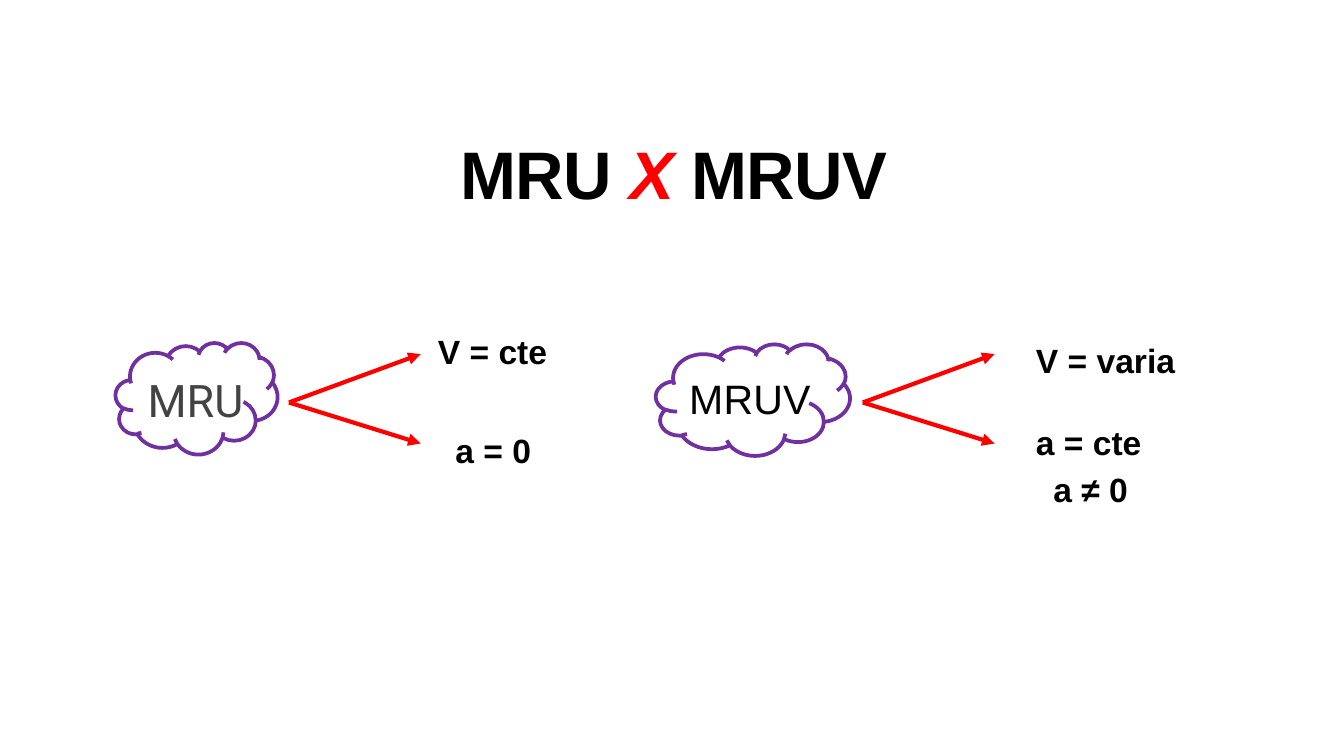
from dataclasses import dataclass

from lxml import etree
from pptx import Presentation
from pptx.dml.color import RGBColor
from pptx.enum.shapes import MSO_AUTO_SHAPE_TYPE, MSO_CONNECTOR
from pptx.enum.text import MSO_ANCHOR, MSO_AUTO_SIZE, PP_ALIGN
from pptx.oxml.ns import qn
from pptx.slide import Slide
from pptx.util import Emu, Pt

CLOUD = MSO_AUTO_SHAPE_TYPE.CLOUD
STRAIGHT = MSO_CONNECTOR.STRAIGHT
BOTTOM = MSO_ANCHOR.BOTTOM
FIXED = MSO_AUTO_SIZE.NONE
GROW = MSO_AUTO_SIZE.SHAPE_TO_FIT_TEXT
CENTER = PP_ALIGN.CENTER
PX = 4572


@dataclass(frozen=True)
class Theme:
    black: str = "000000"
    gray: str = "434343"
    red: str = "FF0000"
    purple: str = "7030A0"
    face: str = "Arial"
    round_face: str = "Roboto"
    title: int = 36
    label: int = 18
    edge: float = 2
    arrow: float = 2.25


THEME = Theme()


@dataclass(frozen=True)
class Box:
    left: int
    top: int
    width: int
    height: int


@dataclass(frozen=True)
class Label:
    text: str
    box: Box


@dataclass(frozen=True)
class Name:
    text: str
    box: Box
    face: str
    size: int
    color: str
    inset: int
    track: int = 0
    lead: float = 1.0


@dataclass(frozen=True)
class Motion:
    name: Name
    cloud: Box
    start: int
    labels: tuple[Label, ...]


MOTIONS = (
    Motion(
        Name("MRU", Box(200, 535, 214, 114), THEME.round_face, 24, THEME.gray, 20),
        Box(172, 510, 241, 166),
        430,
        (
            Label("V = cte", Box(632, 483, 204, 80)),
            Label("a = 0", Box(658, 630, 154, 80)),
        ),
    ),
    Motion(
        Name("MRUV", Box(1006, 551, 324, 180), THEME.face, 22, THEME.black, 10, 10, 0.95),
        Box(976, 512, 289, 166),
        1284,
        (
            Label("V = varia", Box(1522, 496, 250, 80)),
            Label("a = cte", Box(1522, 618, 198, 80)),
            Label("a ≠ 0", Box(1548, 688, 152, 80)),
        ),
    ),
)
FORK = 599
REACH = 196
TIPS = (527, 660)


def px(count: int) -> Emu:
    return Emu(count * PX)


def place(box: Box) -> tuple[Emu, Emu, Emu, Emu]:
    return px(box.left), px(box.top), px(box.width), px(box.height)


def style(run, face: str, size: int, color: str, bold: bool, track: int = 0) -> None:
    font = run.font
    font.name = face
    font.size = Pt(size)
    font.bold = bold
    font.color.rgb = RGBColor.from_string(color)
    if track:
        font._element.set("spc", str(track))


def draw_title(slide: Slide) -> None:
    shape = slide.shapes.title
    shape.left, shape.top, shape.width, shape.height = place(Box(234, 174, 1537, 164))
    frame = shape.text_frame
    frame.auto_size = FIXED
    frame.vertical_anchor = BOTTOM
    frame.margin_left = frame.margin_right = px(20)
    frame.margin_top = frame.margin_bottom = px(20)
    line = frame.paragraphs[0]
    line.alignment = CENTER
    line.line_spacing = 0.9
    parts = (("MRU ", THEME.black), ("X", THEME.red), (" MRUV", THEME.black))
    for text, color in parts:
        run = line.add_run()
        run.text = text
        style(run, THEME.face, THEME.title, color, True, -50)
        run.font.italic = color == THEME.red


def draw_name(slide: Slide, name: Name) -> None:
    frame = slide.shapes.add_textbox(*place(name.box)).text_frame
    frame.word_wrap = True
    frame.margin_top = frame.margin_bottom = px(name.inset)
    frame.text = name.text
    line = frame.paragraphs[0]
    line.line_spacing = name.lead
    style(line.runs[0], name.face, name.size, name.color, False, name.track)


def draw_label(slide: Slide, label: Label) -> None:
    frame = slide.shapes.add_textbox(*place(label.box)).text_frame
    frame.word_wrap = False
    frame.auto_size = GROW
    frame.text = label.text
    style(frame.paragraphs[0].runs[0], THEME.face, THEME.label, THEME.black, True)


def draw_cloud(slide: Slide, box: Box) -> None:
    cloud = slide.shapes.add_shape(CLOUD, *place(box))
    cloud.shadow.inherit = False
    cloud.fill.background()
    cloud.line.color.rgb = RGBColor.from_string(THEME.purple)
    cloud.line.width = Pt(THEME.edge)


def draw_arrow(slide: Slide, start: int, tip: int) -> None:
    arrow = slide.shapes.add_connector(
        STRAIGHT, px(start), px(FORK), px(start + REACH), px(tip)
    )
    arrow.line.color.rgb = RGBColor.from_string(THEME.red)
    arrow.line.width = Pt(THEME.arrow)
    props = arrow._element.spPr
    etree.SubElement(props.find(qn("a:ln")), qn("a:tailEnd"), type="triangle")
    etree.SubElement(props, qn("a:effectLst"))


def draw_motion(slide: Slide, motion: Motion) -> None:
    draw_name(slide, motion.name)
    for tip in TIPS:
        draw_arrow(slide, motion.start, tip)
    for label in motion.labels:
        draw_label(slide, label)
    draw_cloud(slide, motion.cloud)


def main() -> None:
    deck = Presentation()
    deck.slide_width, deck.slide_height = px(2000), px(1125)
    slide = deck.slides.add_slide(deck.slide_layouts[5])
    draw_title(slide)
    for motion in MOTIONS:
        draw_motion(slide, motion)
    deck.save("out.pptx")


if __name__ == "__main__":
    main()
